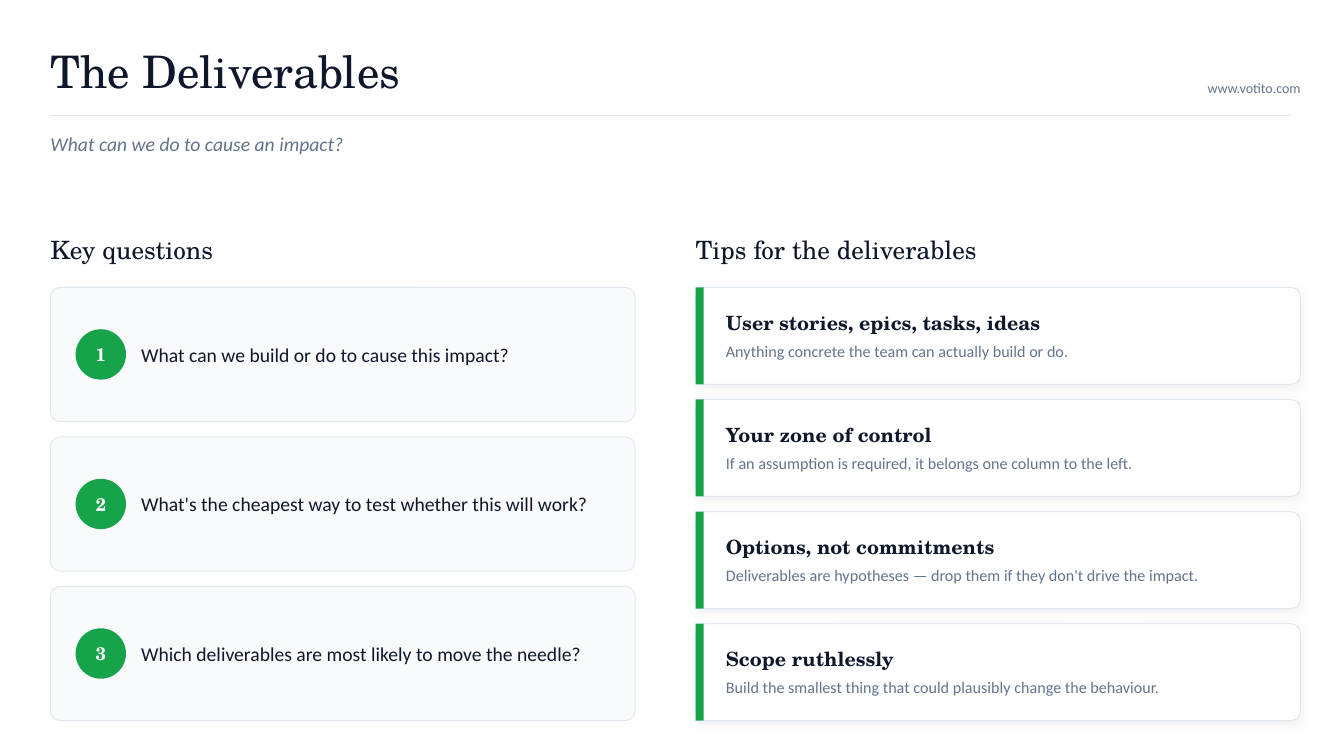
"""Build the deliverables slide: numbered key questions beside tip cards."""
from dataclasses import dataclass

from lxml import etree
from pptx import Presentation
from pptx.dml.color import RGBColor
from pptx.enum.shapes import MSO_CONNECTOR as Connector, MSO_SHAPE as Shape
from pptx.enum.text import MSO_ANCHOR as Anchor, PP_ALIGN as Align
from pptx.oxml.ns import qn
from pptx.util import Inches, Pt

TITLE = "The Deliverables"
SUBTITLE = "What can we do to cause an impact?"
ADDRESS = "www.votito.com"
QUESTIONS_HEADING = "Key questions"
QUESTIONS = [
    "What can we build or do to cause this impact?",
    "What's the cheapest way to test whether this will work?",
    "Which deliverables are most likely to move the needle?",
]
TIPS_HEADING = "Tips for the deliverables"
TIPS = [
    ("User stories, epics, tasks, ideas", "Anything concrete the team can actually build or do."),
    ("Your zone of control", "If an assumption is required, it belongs one column to the left."),
    ("Options, not commitments", "Deliverables are hypotheses — drop them if they don't drive the impact."),
    ("Scope ruthlessly", "Build the smallest thing that could plausibly change the behaviour."),
]


@dataclass(frozen=True)
class Theme:
    """Colours, fonts and type sizes."""
    ink: str = "0F172A"
    muted: str = "64748B"
    rule: str = "E2E8F0"
    panel: str = "F8FAFC"
    white: str = "FFFFFF"
    green: str = "16A34A"
    serif: str = "TeX Gyre Schola"
    sans: str = "Calibri"
    title: float = 32
    heading: float = 18
    body: float = 14
    number: float = 13
    detail: float = 11.5
    small: float = 10
    hairline: float = 0.75
    tip_space: float = 5


THEME = Theme()
LEFT, LEFT_WIDTH = 0.5, 5.8
RIGHT, RIGHT_WIDTH = 6.9, 6
HEADING_TOP, HEADING_HEIGHT = 2.25, 0.45
CARDS_TOP, CARDS_BOTTOM, CARD_GAP = 2.85, 7.15, 0.15
CORNER, BADGE, ACCENT = 0.1, 0.5, 0.08


def rgb(color):
    return RGBColor.from_string(color)


def style(font, name, size, color, bold=False, italic=False):
    font.name, font.size, font.color.rgb = name, Pt(size), rgb(color)
    font.bold, font.italic = bold, italic


def add_text(slide, area, *lines, align=Align.LEFT, space=0):
    """Each line is a text followed by its font settings."""
    box = slide.shapes.add_textbox(*map(Inches, area))
    frame = box.text_frame
    frame.word_wrap = True
    frame.vertical_anchor = Anchor.MIDDLE
    frame.margin_left = frame.margin_right = frame.margin_top = frame.margin_bottom = 0
    for index, (text, *look) in enumerate(lines):
        para = frame.add_paragraph() if index else frame.paragraphs[0]
        para.alignment = align
        if index:
            para.space_before = Pt(space)
        para.add_run().text = text
        style(para.font, *look)


def add_block(slide, kind, area, fill, outlined=False):
    block = slide.shapes.add_shape(kind, *map(Inches, area))
    block.shadow.inherit = False
    block.fill.solid()
    block.fill.fore_color.rgb = rgb(fill)
    if outlined:
        block.line.color.rgb = rgb(THEME.rule)
        block.line.width = Pt(THEME.hairline)
    else:
        block.line.fill.background()
    return block


def add_card(slide, area, fill):
    card = add_block(slide, Shape.ROUNDED_RECTANGLE, area, fill, outlined=True)
    card.adjustments[0] = CORNER / area[3]
    return card


def add_soft_shadow(card):
    effects = card._element.spPr.find(qn("a:effectLst"))
    shadow = etree.SubElement(effects, qn("a:outerShdw"), blurRad=str(Pt(8)),
                              dist=str(Pt(2)), dir="5400000", algn="t", rotWithShape="0")
    color = etree.SubElement(shadow, qn("a:srgbClr"), val="000000")
    etree.SubElement(color, qn("a:alpha"), val="5000")


def stack(count):
    """Return the top and height of each card in a column."""
    height = (CARDS_BOTTOM - CARDS_TOP - CARD_GAP * (count - 1)) / count
    return [(CARDS_TOP + index * (height + CARD_GAP), height) for index in range(count)]


def add_header(slide):
    add_text(slide, (LEFT, 0.35, 9, 0.7), (TITLE, THEME.serif, THEME.title, THEME.ink))
    add_text(slide, (10.3, 0.72, 2.6, 0.3),
             (ADDRESS, THEME.sans, THEME.small, THEME.muted), align=Align.RIGHT)
    rule = slide.shapes.add_connector(Connector.STRAIGHT, *map(Inches, (LEFT, 1.15, 12.8, 1.15)))
    rule.line.color.rgb = rgb(THEME.rule)
    rule.line.width = Pt(THEME.hairline)
    etree.SubElement(rule._element.spPr, qn("a:effectLst"))
    add_text(slide, (LEFT, 1.25, 12.3, 0.35),
             (SUBTITLE, THEME.sans, THEME.body, THEME.muted, False, True))


def add_questions(slide):
    for number, (question, (top, height)) in enumerate(zip(QUESTIONS, stack(len(QUESTIONS))), 1):
        add_card(slide, (LEFT, top, LEFT_WIDTH, height), THEME.panel)
        badge = (LEFT + 0.25, top + (height - BADGE) / 2, BADGE, BADGE)
        add_block(slide, Shape.OVAL, badge, THEME.green)
        add_text(slide, badge, (str(number), THEME.serif, THEME.number, THEME.white, True),
                 align=Align.CENTER)
        add_text(slide, (LEFT + 0.9, top, 4.75, height),
                 (question, THEME.sans, THEME.body, THEME.ink))


def add_tips(slide):
    for (tip, detail), (top, height) in zip(TIPS, stack(len(TIPS))):
        add_soft_shadow(add_card(slide, (RIGHT, top, RIGHT_WIDTH, height), THEME.white))
        add_block(slide, Shape.RECTANGLE, (RIGHT, top, ACCENT, height), THEME.green)
        add_text(slide, (RIGHT + 0.3, top, 5.6, height),
                 (tip, THEME.serif, THEME.body, THEME.ink, True),
                 (detail, THEME.sans, THEME.detail, THEME.muted), space=THEME.tip_space)


def main():
    deck = Presentation()
    deck.slide_width, deck.slide_height = Inches(13.33), Inches(7.5)
    page = deck.slides.add_slide(deck.slide_layouts[6])
    page.background.fill.solid()
    page.background.fill.fore_color.rgb = rgb(THEME.white)
    add_header(page)
    for heading, left, width in ((QUESTIONS_HEADING, LEFT, LEFT_WIDTH),
                                 (TIPS_HEADING, RIGHT, RIGHT_WIDTH)):
        add_text(page, (left, HEADING_TOP, width, HEADING_HEIGHT),
                 (heading, THEME.serif, THEME.heading, THEME.ink))
    add_questions(page)
    add_tips(page)
    deck.save("out.pptx")


if __name__ == "__main__":
    main()
